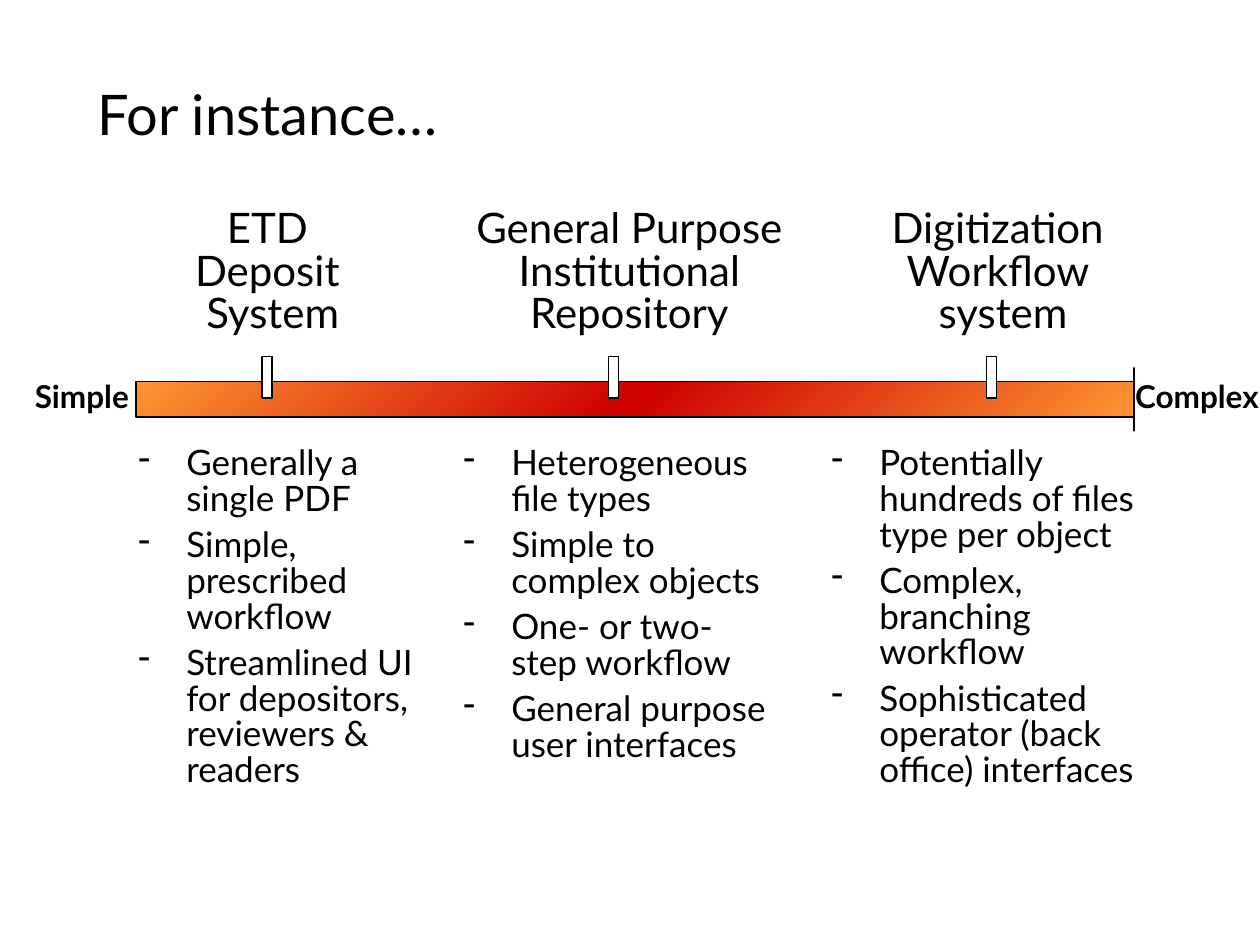
from copy import deepcopy

from pptx import Presentation
from pptx import util as u
from pptx.dml.color import RGBColor
from pptx.enum import shapes, text
from pptx.oxml import ns, xmlchemy

BLACK = RGBColor(0x00, 0x00, 0x00)
WHITE = RGBColor(0xFF, 0xFF, 0xFF)
ORANGE = RGBColor(0xFF, 0x99, 0x33)
RED = RGBColor(0xCC, 0x00, 0x00)

HEADING_TOP, BODY_TOP = 1.61, 3.5

COLUMNS = [
    {
        "heading": ("ETD \vDeposit \vSystem", 0.75, 2.83),
        "body": (1, 2.58, 3.18),
        "marker": 2.08,
        "points": [
            "Generally a single PDF",
            "Simple, prescribed workflow",
            "Streamlined UI for depositors, reviewers & readers",
        ],
    },
    {
        "heading": ("General Purpose Institutional Repository", 3.58, 2.83),
        "body": (3.58, 2.67, 2.65),
        "marker": 4.83,
        "points": [
            "Heterogeneous file types",
            "Simple to complex objects",
            "One- or two-step workflow",
            "General purpose user interfaces",
        ],
    },
    {
        "heading": ("Digitization \vWorkflow \vsystem", 6.17, 3.58),
        "body": (6.5, 2.92, 2.57),
        "marker": 7.83,
        "points": [
            "Potentially hundreds of files type per object",
            "Complex, branching workflow",
            "Sophisticated operator (back office) interfaces",
        ],
    },
]


def add_dash(paragraph):
    properties = paragraph._p.get_or_add_pPr()
    indent = u.Inches(0.38)
    properties.set("marL", str(indent))
    properties.set("indent", str(-indent))
    bullet = xmlchemy.OxmlElement("a:buChar")
    bullet.set("char", "-")
    properties.append(bullet)


def write(frame, paragraphs, size, bold=False, centred=False, spacing=None, dashes=False):
    frame.word_wrap = True
    frame.auto_size = text.MSO_AUTO_SIZE.SHAPE_TO_FIT_TEXT
    frame.vertical_anchor = text.MSO_ANCHOR.TOP
    for index, content in enumerate(paragraphs):
        paragraph = frame.add_paragraph() if index else frame.paragraphs[0]
        paragraph.text = content
        if dashes:
            add_dash(paragraph)
        paragraph.alignment = text.PP_ALIGN.CENTER if centred else text.PP_ALIGN.LEFT
        paragraph.space_before = u.Pt(6 if index else 0)
        if spacing:
            paragraph.line_spacing = spacing
        for run in paragraph.runs:
            run.font.name = "Lato"
            run.font.size = u.Pt(size)
            run.font.bold = bold
            run.font.color.rgb = BLACK


class SpectrumSlide:
    line_width = u.Pt(0.75)
    tight = 0.85

    def __init__(self, presentation):
        self.slide = presentation.slides.add_slide(presentation.slide_layouts[5])

    def title(self, content, left, top, width, height):
        shape = self.slide.shapes.title
        shape.left, shape.top = u.Inches(left), u.Inches(top)
        shape.width, shape.height = u.Inches(width), u.Inches(height)
        write(shape.text_frame, [content], 32)

    def text_box(self, paragraphs, left, top, width, height, **style):
        box = self.slide.shapes.add_textbox(*map(u.Inches, (left, top, width, height)))
        write(box.text_frame, paragraphs, **style)

    def heading(self, content, left, width):
        self.text_box([content], left, HEADING_TOP, width, 1.14,
                      size=24, centred=True, spacing=self.tight)

    def points(self, paragraphs, left, width, height):
        self.text_box(paragraphs, left, BODY_TOP, width, height,
                      size=20, spacing=self.tight, dashes=True)

    def end_label(self, content, left):
        self.text_box([content], left, 2.94, 1.5, 0.4, size=18, bold=True, centred=True)

    def outlined(self, kind, left, top, width, height):
        shape = self.slide.shapes.add_shape(kind, *map(u.Inches, (left, top, width, height)))
        shape.shadow.inherit = False
        shape.line.color.rgb = BLACK
        shape.line.width = self.line_width
        return shape

    def spectrum(self, left, top, width, height):
        arrow = self.outlined(shapes.MSO_SHAPE.RIGHT_ARROW, left, top, width, height)
        arrow.adjustments[0] = 0.56
        arrow.adjustments[1] = 0
        arrow.fill.gradient()
        arrow.fill.gradient_angle = 315
        stop_list = arrow._element.spPr.find(".//" + ns.qn("a:gsLst"))
        stop_list.append(deepcopy(stop_list[0]))
        for stop, position, colour in zip(
            arrow.fill.gradient_stops, (0, 0.5, 1), (ORANGE, RED, ORANGE)
        ):
            stop.position = position
            stop.color.rgb = colour

    def marker(self, left):
        shape = self.outlined(shapes.MSO_SHAPE.RECTANGLE, left, 2.83, 0.08, 0.33)
        shape.fill.solid()
        shape.fill.fore_color.rgb = WHITE


def main():
    presentation = Presentation()
    presentation.slide_width = u.Inches(10)
    presentation.slide_height = u.Inches(7.5)

    page = SpectrumSlide(presentation)
    page.title("For instance…", 0.67, 0.58, 8.42, 0.64)
    page.spectrum(1.08, 2.92, 7.92, 0.5)
    page.end_label("Simple", -0.1)
    page.end_label("Complex", 8.75)
    for column in COLUMNS:
        page.heading(*column["heading"])
        page.marker(column["marker"])
        page.points(column["points"], *column["body"])

    presentation.save("out.pptx")


if __name__ == "__main__":
    main()
